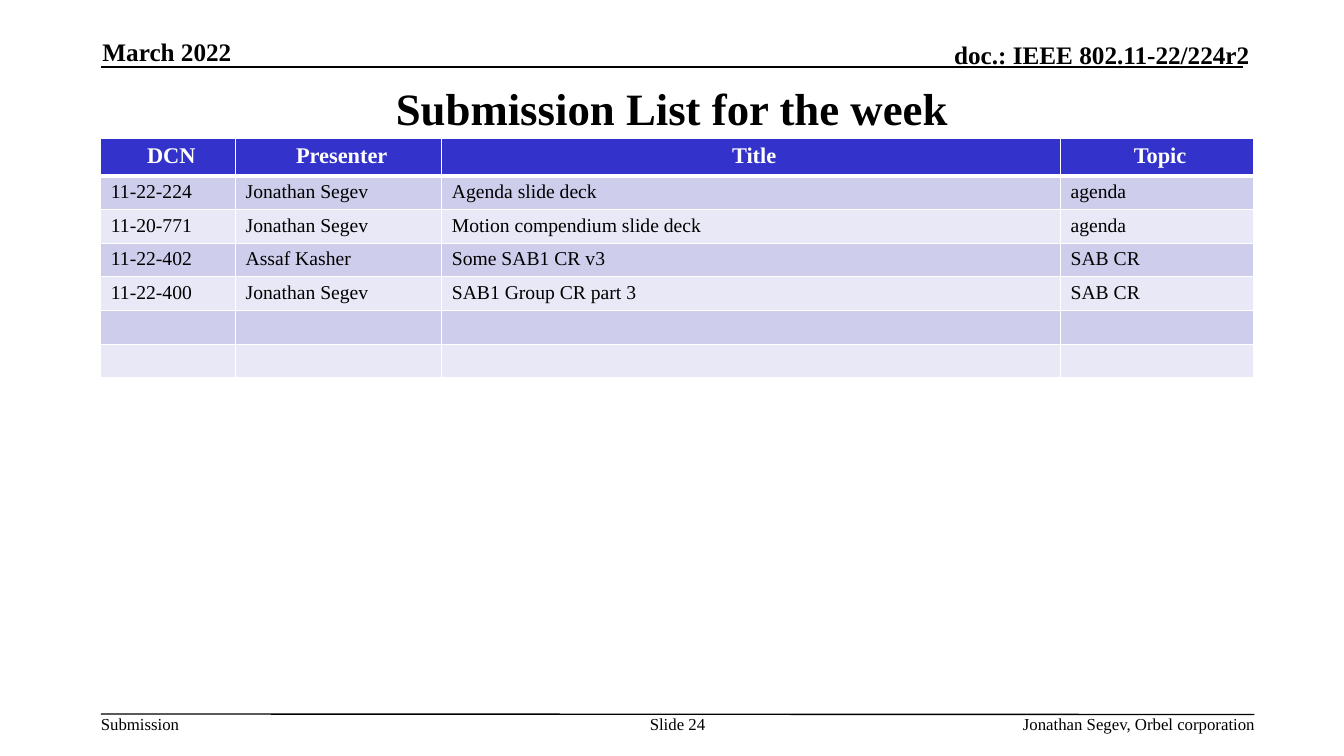
from lxml import etree
from pptx import Presentation
from pptx.dml.color import RGBColor
from pptx.enum.shapes import MSO_CONNECTOR
from pptx.enum.text import MSO_ANCHOR, PP_ALIGN
from pptx.oxml.ns import qn
from pptx.util import Pt

LEFT, CENTER, RIGHT = PP_ALIGN.LEFT, PP_ALIGN.CENTER, PP_ALIGN.RIGHT
TOP, MIDDLE, BOTTOM = MSO_ANCHOR.TOP, MSO_ANCHOR.MIDDLE, MSO_ANCHOR.BOTTOM
STRAIGHT = MSO_CONNECTOR.STRAIGHT
FONT = "Times New Roman"
COLORS = {"text": "000000", "white": "FFFFFF", "header": "3333CC",
          "odd": "CECEEC", "even": "E8E8F6"}


def format_paragraph(p, size, bold=False, align=LEFT, color="text"):
    p.alignment = align
    p.font.name = FONT
    p.font.size = Pt(size)
    p.font.bold = bold
    p.font.color.rgb = RGBColor.from_string(COLORS[color])


def add_border(cell, side, width):
    ln = etree.SubElement(cell._tc.get_or_add_tcPr(), qn(f"a:{side}"), w=str(Pt(width)))
    fill = etree.SubElement(ln, qn("a:solidFill"))
    etree.SubElement(fill, qn("a:srgbClr"), val=COLORS["white"])


prs = Presentation()
prs.slide_width, prs.slide_height = Pt(960), Pt(540)
s = prs.slides.add_slide(prs.slide_layouts[5])

for x1, y1, x2, y2 in [(72, 48, 888, 48), (72, 510, 896, 510.4)]:
    line = s.shapes.add_connector(STRAIGHT, Pt(x1), Pt(y1), Pt(x2), Pt(y2))
    line.line.color.rgb = RGBColor.from_string(COLORS["text"])
    line.line.width = Pt(0.99)
    etree.SubElement(line._element.spPr, qn("a:effectLst"))

title = s.shapes.title
title.left, title.top, title.width, title.height = Pt(72), Pt(54), Pt(816), Pt(46)
tf = title.text_frame
tf.text = "Submission List for the week"
tf.vertical_anchor = MIDDLE
format_paragraph(tf.paragraphs[0], 32, True, CENTER)

labels = [
    ("March 2022", 73.2, 26, 196.5, 21.6, 18, True, LEFT, BOTTOM),
    ("doc.: IEEE 802.11-22/224r2", 525, 28, 367.5, 21.6, 18, True, RIGHT, BOTTOM),
    ("Submission", 72, 510, 57, 14.4, 12, False, LEFT, TOP),
    ("Slide 24", 456.2, 510, 55.5, 28.8, 12, False, CENTER, TOP),
    ("Jonathan Segev, Orbel corporation", 562, 510, 334.5, 14.4, 12, False, RIGHT, TOP),
]
for text, x, y, w, h, size, bold, align, anchor in labels:
    tf = s.shapes.add_textbox(Pt(x), Pt(y), Pt(w), Pt(h)).text_frame
    tf.margin_left = tf.margin_right = tf.margin_top = tf.margin_bottom = 0
    tf.word_wrap = text != "Submission"
    tf.vertical_anchor = anchor
    tf.text = text
    format_paragraph(tf.paragraphs[0], size, bold, align)

rows = [
    ("DCN", "Presenter", "Title", "Topic"),
    ("11-22-224", "Jonathan Segev", "Agenda slide deck", "agenda"),
    ("11-20-771", "Jonathan Segev", "Motion compendium slide deck", "agenda"),
    ("11-22-402", "Assaf Kasher", "Some SAB1 CR v3", "SAB CR"),
    ("11-22-400", "Jonathan Segev", "SAB1 Group CR part 3", "SAB CR"),
    ("",) * 4,
    ("",) * 4,
]
widths = [96.3, 147.3, 442, 137.9]
table = s.shapes.add_table(len(rows), len(widths), Pt(72), Pt(99.2),
                           Pt(sum(widths)), Pt(160.5)).table
for column, width in zip(table.columns, widths):
    column.width = Pt(width)

for i, values in enumerate(rows):
    header = i == 0
    table.rows[i].height = Pt(24.9 if header else 22.6)
    for j, text in enumerate(values):
        cell = table.cell(i, j)
        cell.margin_left = Pt(7.2)
        cell.margin_right = Pt(2.9 if header else 7.2)
        cell.margin_top = cell.margin_bottom = Pt(3.6)
        cell.text = text
        p = cell.text_frame.paragraphs[0]
        if header:
            format_paragraph(p, 16, True, CENTER, "white")
        else:
            format_paragraph(p, 14)
        if not text:
            end = etree.SubElement(p._p, qn("a:endParaRPr"), sz="1400")
            etree.SubElement(end, qn("a:latin"), typeface=FONT)
        for side in ("lnL", "lnR", "lnT", "lnB"):
            thick = (header and side == "lnB") or (i == 1 and side == "lnT")
            add_border(cell, side, 3 if thick else 1)
        cell.fill.solid()
        band = "header" if header else "odd" if i % 2 else "even"
        cell.fill.fore_color.rgb = RGBColor.from_string(COLORS[band])

prs.save("out.pptx")
